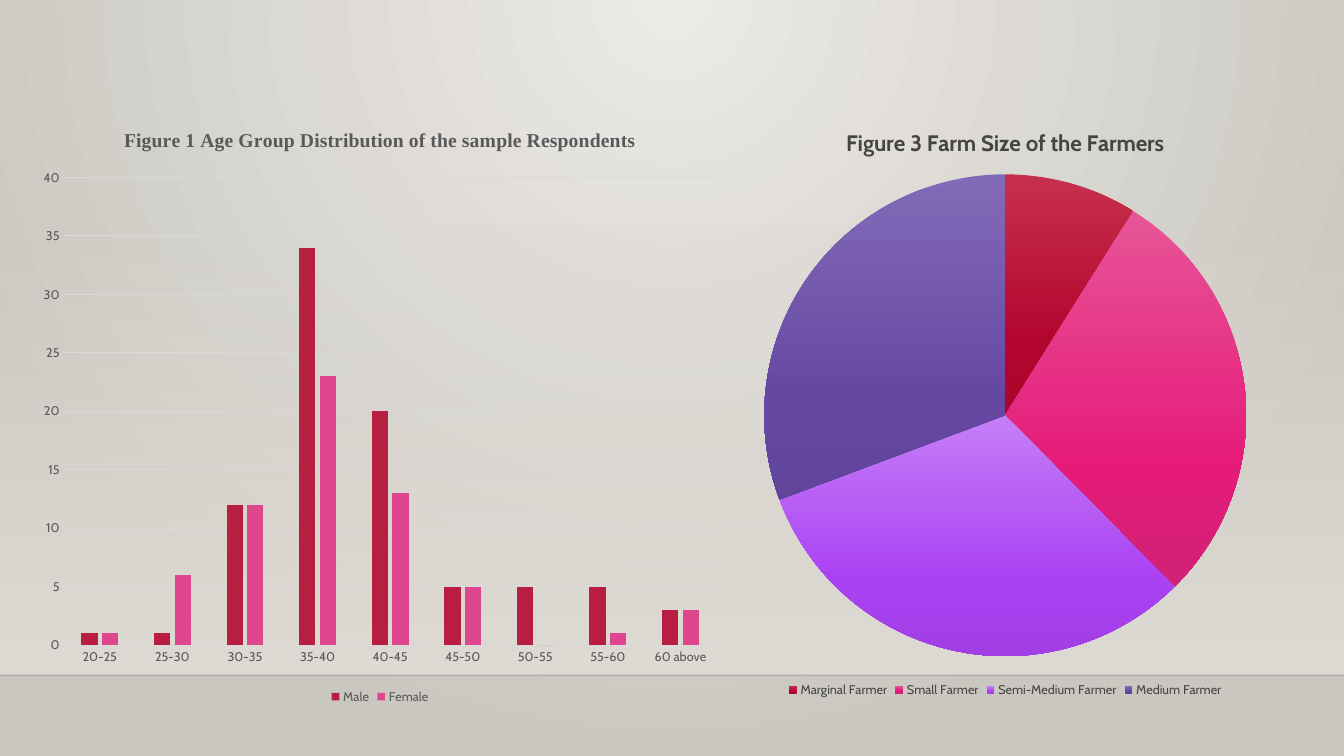
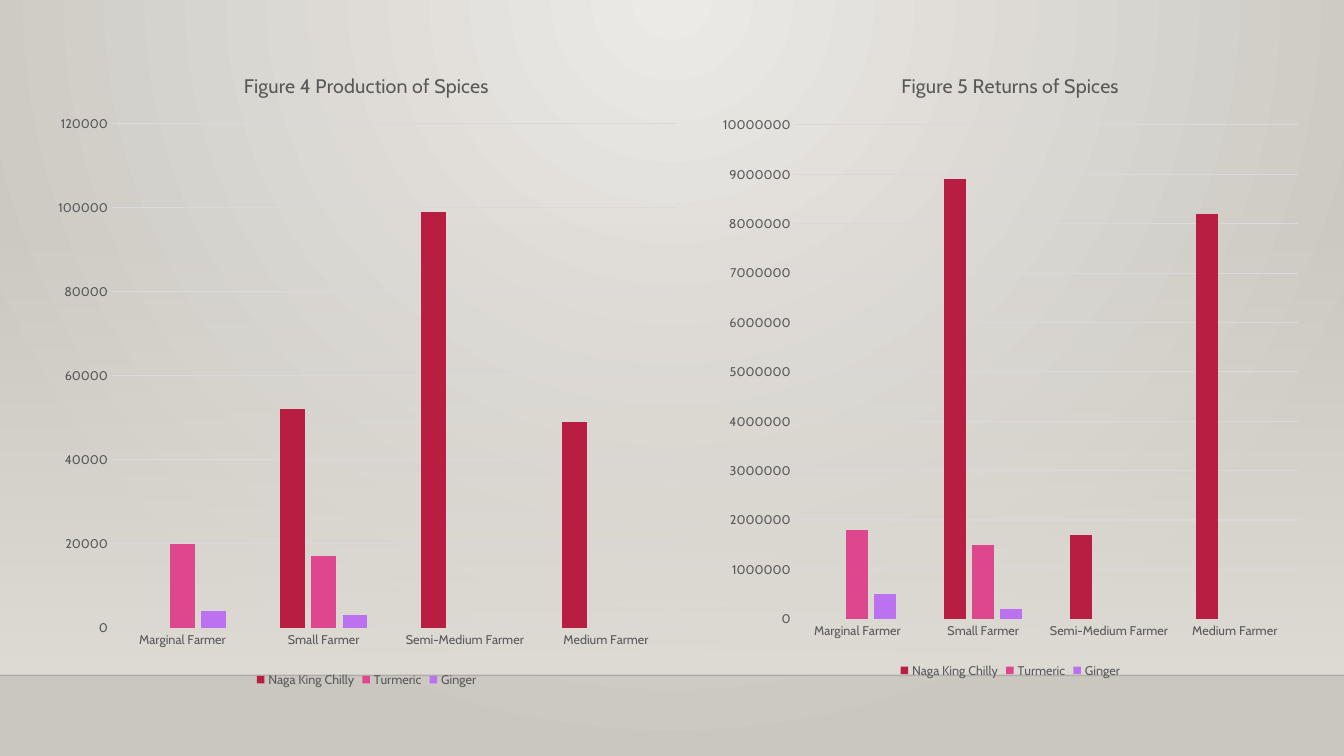
"""Build two slides of survey charts on age, farm size, production and returns."""
from lxml import etree
from pptx import Presentation
from pptx.chart.data import CategoryChartData
from pptx.dml.color import RGBColor
from pptx.enum.chart import XL_CHART_TYPE, XL_LEGEND_POSITION, XL_TICK_MARK
from pptx.enum.shapes import MSO_CONNECTOR, MSO_SHAPE
from pptx.oxml.ns import qn
from pptx.util import Inches, Pt

COLUMN, PIE = XL_CHART_TYPE.COLUMN_CLUSTERED, XL_CHART_TYPE.PIE
BOTTOM, NO_TICK = XL_LEGEND_POSITION.BOTTOM, XL_TICK_MARK.NONE
RECTANGLE, STRAIGHT = MSO_SHAPE.RECTANGLE, MSO_CONNECTOR.STRAIGHT

SLIDE_W, SLIDE_H = 13.33, 7.5
BAND_TOP, BAND_BOTTOM = 2.21, 6.7
FONT, SERIF = "Cabin", "Times New Roman"
GREY, DARK_GREY, RULE, BAND, LINE = "595959", "454545", "D9D9D9", "DFDBD5", "000000"
SERIES_COLORS = ["B71E42", "DE478E", "BC72F0"]
BACKDROP = [(0, "ECEAE7", 100), (100, "CAC7C1", 100)]
BAND_FADE = [(0, BAND, 0), (100, BAND, 100)]
SLICE_COLORS = [
    ("C7304C", "B3062F", "AA062C"),
    ("E75597", "E51A79", "CF2374"),
    ("C57FF7", "AA41F3", "A13FE5"),
    ("836AB8", "6648A3", "60459A"),
]
SLICE_STOPS = (0, 69, 100)

AGES = ["20-25", "25-30", "30-35", "35-40", "40-45", "45-50", "50-55", "55-60", "60 above"]
FARMERS = ["Marginal Farmer", "Small Farmer", "Semi-Medium Farmer", "Medium Farmer"]

SLIDES = [
    [
        dict(
            kind=COLUMN, box=(0.29, 1.06, 6.96, 5.97), plot=(0.63, 1.76, 6.48, 4.64),
            title="Figure 1 Age Group Distribution of the sample Respondents",
            title_at=(1.21, 1.29), title_format=dict(bold=True, name=SERIF),
            categories=AGES, scale=(40, 5),
            series={
                "Male": [1, 1, 12, 34, 20, 5, 5, 5, 3],
                "Female": [1, 6, 12, 23, 13, 5, 0, 1, 3],
            },
        ),
        dict(
            kind=PIE, box=(7.05, 1.06, 5.84, 5.9), plot=(7.58, 1.73, 4.78, 4.78),
            title="Figure 3 Farm Size of the Farmers",
            title_at=(8.39, 1.28), title_format=dict(size=16, bold=True, color=DARK_GREY),
            categories=FARMERS, legend_color=DARK_GREY,
            series={"Series 1": [9, 29, 32, 31]},
        ),
    ],
    [
        dict(
            kind=COLUMN, box=(0.45, 0.5, 6.37, 6.36), plot=(1.11, 1.23, 5.6, 5),
            title="Figure 4 Production of Spices", title_at=(2.42, 0.73),
            categories=FARMERS, scale=(120000, 20000),
            series={
                "Naga King Chilly": [None, 52000, 99000, 49000],
                "Turmeric": [20000, 17000, None, None],
                "Ginger": [4000, 3000, None, None],
            },
        ),
        dict(
            kind=COLUMN, box=(7.05, 0.5, 5.94, 6.27), plot=(7.88, 1.24, 4.99, 4.9),
            title="Figure 5 Returns of Spices", title_at=(8.94, 0.74),
            categories=FARMERS, scale=(10000000, 1000000),
            series={
                "Naga King Chilly": [None, 8900000, 1700000, 8200000],
                "Turmeric": [1800000, 1500000, None, None],
                "Ginger": [500000, 200000, None, None],
            },
        ),
    ],
]


def rgb(value):
    return RGBColor.from_string(value)


def add_child(parent, tag, **attributes):
    child = etree.SubElement(parent, qn(tag))
    for name, value in attributes.items():
        child.set(name, str(value))
    return child


def add_alpha(color, percent):
    add_child(color, "a:alpha", val=percent * 1000)


def set_gradient(gradient, stops, radial=False):
    for child in list(gradient):
        gradient.remove(child)
    stop_list = add_child(gradient, "a:gsLst")
    for position, color, opacity in stops:
        stop = add_child(stop_list, "a:gs", pos=position * 1000)
        swatch = add_child(stop, "a:srgbClr", val=color)
        if opacity < 100:
            add_alpha(swatch, opacity)
    if radial:
        path = add_child(gradient, "a:path", path="circle")
        add_child(path, "a:fillToRect", l=43000, t=0, r=43000, b=100000)
    else:
        add_child(gradient, "a:lin", ang=90 * 60000, scaled=0)


def gradients_in(element):
    return list(element.iter(qn("a:gradFill")))


def style_font(font, size=9, color=GREY, name=FONT, bold=False):
    font.size, font.name, font.bold = Pt(size), name, bold
    font.color.rgb = rgb(color)


def write_title(chart, text, size=14, **font_format):
    frame = chart.chart_title.text_frame
    frame.text = text
    style_font(frame.paragraphs[0].runs[0].font, size=size, **font_format)


def manual_layout(box, area, inner=False):
    """Return a layout element placing an area, in slide inches, within a chart box."""
    left, top, width, height = box
    fractions = [(area[0] - left) / width, (area[1] - top) / height]
    if len(area) == 4:
        fractions += [area[2] / width, area[3] / height]
    layout = etree.Element(qn("c:layout"))
    manual = add_child(layout, "c:manualLayout")
    if inner:
        add_child(manual, "c:layoutTarget", val="inner")
    for mode in ("c:xMode", "c:yMode"):
        add_child(manual, mode, val="edge")
    for tag, fraction in zip(("c:x", "c:y", "c:w", "c:h"), fractions):
        add_child(manual, tag, val=round(fraction, 4))
    return layout


def place_parts(chart, box, title_at, plot):
    chart.chart_title.element.find(qn("c:tx")).addnext(manual_layout(box, title_at))
    plot_area = next(chart.element.iter(qn("c:plotArea")))
    for layout in plot_area.findall(qn("c:layout")):
        plot_area.remove(layout)
    plot_area.insert(0, manual_layout(box, plot, inner=True))


def style_columns(chart, scale):
    columns = chart.plots[0]
    columns.gap_width, columns.overlap = 219, -27
    columns.vary_by_categories = False
    for series, color in zip(columns.series, SERIES_COLORS):
        series.format.fill.solid()
        series.format.fill.fore_color.rgb = rgb(color)
        series.invert_if_negative = False
    values, categories = chart.value_axis, chart.category_axis
    for axis in (values, categories):
        axis.major_tick_mark = axis.minor_tick_mark = NO_TICK
        style_font(axis.tick_labels.font)
    values.minimum_scale = 0
    values.maximum_scale, values.major_unit = scale
    values.has_major_gridlines = True
    values.format.line.fill.background()
    for line in (values.major_gridlines.format.line, categories.format.line):
        line.color.rgb = rgb(RULE)
        line.width = Pt(0.75)


def style_slices(chart):
    pie = chart.plots[0]
    pie.vary_by_categories = True
    for index in range(len(SLICE_COLORS)):
        pie.series[0].points[index].format.fill.gradient()
    for gradient, colors in zip(gradients_in(chart.element), SLICE_COLORS):
        set_gradient(gradient, [(p, c, 100) for p, c in zip(SLICE_STOPS, colors)])


def add_figure(slide, kind, box, plot, title, title_at, categories, series,
               scale=None, title_format=None, legend_color=GREY):
    data = CategoryChartData()
    data.categories = categories
    for name, values in series.items():
        data.add_series(name, values)
    chart = slide.shapes.add_chart(kind, *map(Inches, box), data).chart
    style_font(chart.font, size=10, color=LINE)
    write_title(chart, title, **(title_format or {}))
    chart.has_legend = True
    chart.legend.position = BOTTOM
    chart.legend.include_in_layout = False
    style_font(chart.legend.font, color=legend_color)
    if kind == PIE:
        style_slices(chart)
    else:
        style_columns(chart, scale)
    place_parts(chart, box, title_at, plot)


def add_band(slide):
    band = slide.shapes.add_shape(RECTANGLE, 0, Inches(BAND_TOP), Inches(SLIDE_W),
                                  Inches(BAND_BOTTOM - BAND_TOP))
    band.shadow.inherit = False
    band.line.fill.background()
    band.fill.gradient()
    set_gradient(gradients_in(band.element)[0], BAND_FADE)
    edge = slide.shapes.add_connector(STRAIGHT, 0, Inches(BAND_BOTTOM),
                                      Inches(SLIDE_W), Inches(BAND_BOTTOM))
    edge.line.color.rgb = rgb(LINE)
    edge.line.width = Pt(1)
    add_alpha(next(edge.element.iter(qn("a:srgbClr"))), 20)
    add_child(edge.element.spPr, "a:effectLst")


def main():
    deck = Presentation()
    deck.slide_width, deck.slide_height = Inches(SLIDE_W), Inches(SLIDE_H)
    master = deck.slide_master
    master.background.fill.gradient()
    set_gradient(gradients_in(master.element)[0], BACKDROP, radial=True)
    for figures in SLIDES:
        slide = deck.slides.add_slide(deck.slide_layouts[6])
        add_band(slide)
        for figure in figures:
            add_figure(slide, **figure)
    deck.save("out.pptx")


if __name__ == "__main__":
    main()
